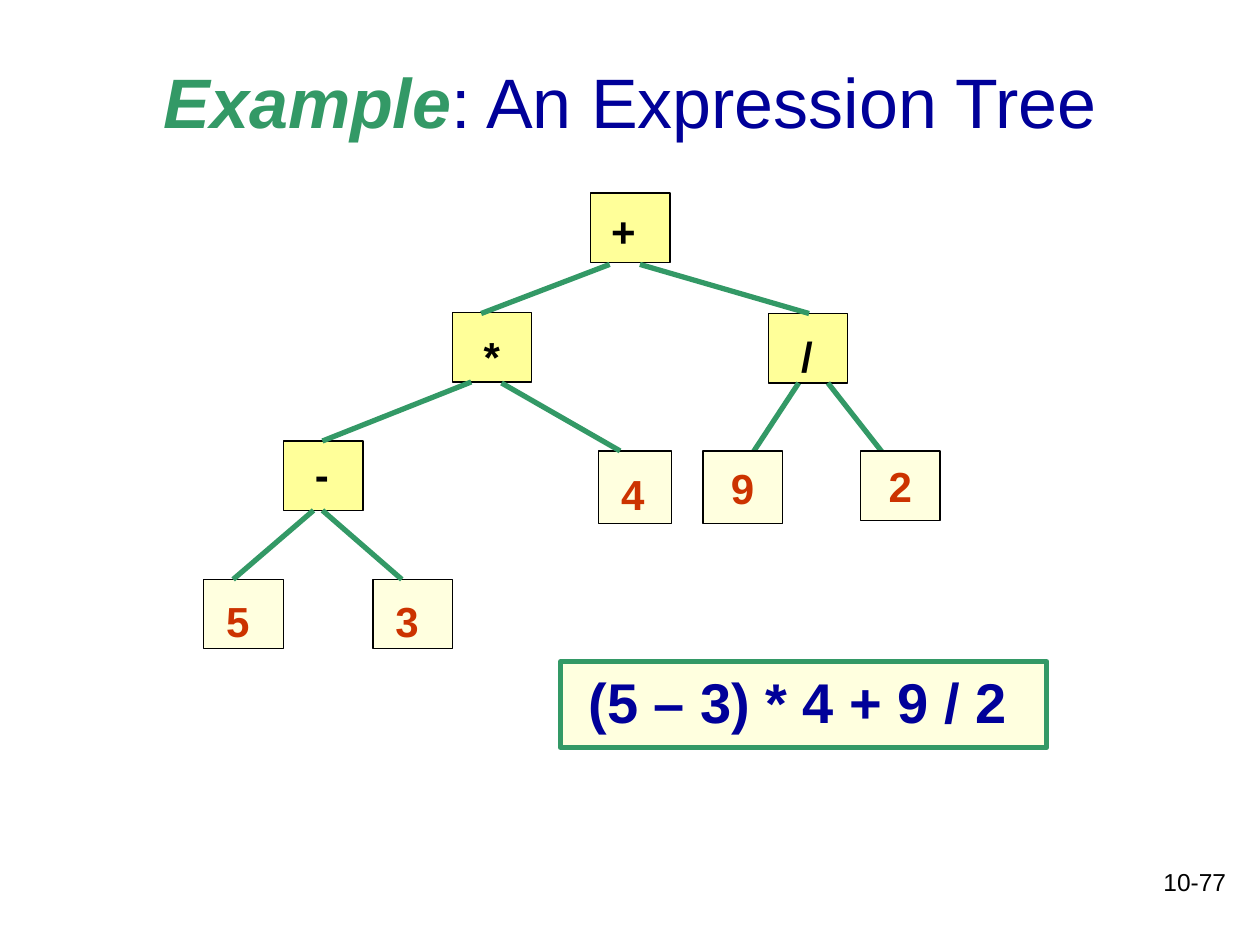
from dataclasses import dataclass

from lxml import etree
from pptx import Presentation
from pptx.dml.color import RGBColor
from pptx.enum.shapes import MSO_CONNECTOR, MSO_SHAPE
from pptx.enum.text import MSO_ANCHOR, PP_ALIGN
from pptx.oxml.ns import qn
from pptx.util import Cm, Pt

RECTANGLE = MSO_SHAPE.RECTANGLE
STRAIGHT = MSO_CONNECTOR.STRAIGHT
TOP, MIDDLE = MSO_ANCHOR.TOP, MSO_ANCHOR.MIDDLE
LEFT, CENTER, RIGHT = PP_ALIGN.LEFT, PP_ALIGN.CENTER, PP_ALIGN.RIGHT
FONT = "Arial"
COLORS = {
    "operator": "FFFF99",
    "operand": "FFFFDF",
    "green": "339966",
    "navy": "000099",
    "red": "CC3300",
    "black": "000000",
}


@dataclass
class Node:
    """A tree node; lengths in cm, label offsets from its corner."""
    label: str
    left: float
    top: float
    label_dx: float = 0
    label_dy: float = 0
    label_width: float = 0.99
    width: float = 1.6
    height: float = 1.4

    @property
    def is_operand(self) -> bool:
        return self.label.isdigit()


@dataclass
class Edge:
    """A branch of the tree; lengths in cm."""
    x1: float
    y1: float
    x2: float
    y2: float


OFFSET_NODES = [
    Node("+", 11.91, 3.89, 0.16, 0.12),
    Node("*", 9.12, 6.3, 0.38, 0.23),
    Node("-", 5.72, 8.89, 0.38, 0.03),
    Node("5", 4.11, 11.68, 0.2, 0.2),
    Node("3", 7.52, 11.68, 0.2, 0.2),
    Node("/", 15.49, 6.32, 0.41, 0.21),
    Node("4", 12.07, 9.09, 0.2, 0.23, 1.22, 1.47, 1.47),
]
CENTERED_NODES = [
    Node("9", 14.17, 9.09, height=1.47),
    Node("2", 17.35, 9.09),
]
EDGES = [
    Edge(12.29, 5.33, 9.7, 6.32),
    Edge(12.9, 5.33, 16.31, 6.32),
    Edge(9.5, 7.7, 6.5, 8.89),
    Edge(10.11, 7.72, 12.5, 9.09),
    Edge(6.32, 10.29, 4.7, 11.68),
    Edge(6.5, 10.29, 8.1, 11.68),
    Edge(16.1, 7.72, 14.91, 9.53),
    Edge(16.69, 7.72, 18.11, 9.53),
]


def rgb(name: str) -> RGBColor:
    return RGBColor.from_string(COLORS[name])


def format_run(run, size: float, color: str, bold=False, italic=False) -> None:
    font = run.font
    font.name, font.size = FONT, Pt(size)
    font.bold, font.italic = bold, italic
    font.color.rgb = rgb(color)


def write(shape, text: str, size: float, color: str, bold=True,
          align=LEFT, anchor=TOP, wrap=True) -> None:
    frame = shape.text_frame
    frame.text = text
    frame.word_wrap = wrap
    frame.vertical_anchor = anchor
    para = frame.paragraphs[0]
    para.alignment = align
    format_run(para.runs[0], size, color, bold)


def add_box(slide, left: float, top: float, width: float, height: float,
            fill: str, line: str, weight: float):
    box = slide.shapes.add_shape(RECTANGLE, Cm(left), Cm(top), Cm(width), Cm(height))
    box.shadow.inherit = False
    box.fill.solid()
    box.fill.fore_color.rgb = rgb(fill)
    box.line.color.rgb = rgb(line)
    box.line.width = Pt(weight)
    return box


def add_node(slide, node: Node) -> None:
    fill, color = ("operand", "red") if node.is_operand else ("operator", "black")
    box = add_box(slide, node.left, node.top, node.width, node.height,
                  fill, "black", 0.75)
    if node.label_dx:
        label = slide.shapes.add_textbox(
            Cm(node.left + node.label_dx), Cm(node.top + node.label_dy),
            Cm(node.label_width), Cm(1.27))
        write(label, node.label, 24, color)
    else:
        write(box, node.label, 24, color, align=CENTER, anchor=MIDDLE, wrap=False)


def add_edge(slide, edge: Edge) -> None:
    branch = slide.shapes.add_connector(
        STRAIGHT, Cm(edge.x1), Cm(edge.y1), Cm(edge.x2), Cm(edge.y2))
    branch.line.color.rgb = rgb("green")
    branch.line.width = Pt(3)
    etree.SubElement(branch._element.spPr, qn("a:effectLst"))


def add_title(slide) -> None:
    title = slide.shapes.title
    title.left, title.top = Cm(1.9), Cm(0.43)
    title.width, title.height = Cm(21.6), Cm(3.18)
    write(title, "Example", 40, "green", align=CENTER, anchor=MIDDLE)
    para = title.text_frame.paragraphs[0]
    para.runs[0].font.italic = True
    rest = para.add_run()
    rest.text = ": An Expression Tree"
    format_run(rest, 40, "navy")


def main() -> None:
    deck = Presentation()
    deck.slide_width, deck.slide_height = Cm(25.4), Cm(19.05)
    slide = deck.slides.add_slide(deck.slide_layouts[5])
    add_title(slide)

    # Page number
    page = slide.shapes.add_textbox(Cm(19.69), Cm(17.35), Cm(5.28), Cm(1.27))
    write(page, "10-77", 14, "black", bold=False, align=RIGHT)

    # Tree: the edges run behind the centred leaves only
    for node in OFFSET_NODES:
        add_node(slide, node)
    for edge in EDGES:
        add_edge(slide, edge)
    for node in CENTERED_NODES:
        add_node(slide, node)

    # Expression that the tree stands for
    expression = add_box(slide, 11.3, 13.34, 9.8, 1.73, "operand", "green", 3)
    write(expression, " (5 – 3) * 4 + 9 / 2", 32, "navy")

    deck.save("out.pptx")


if __name__ == "__main__":
    main()
